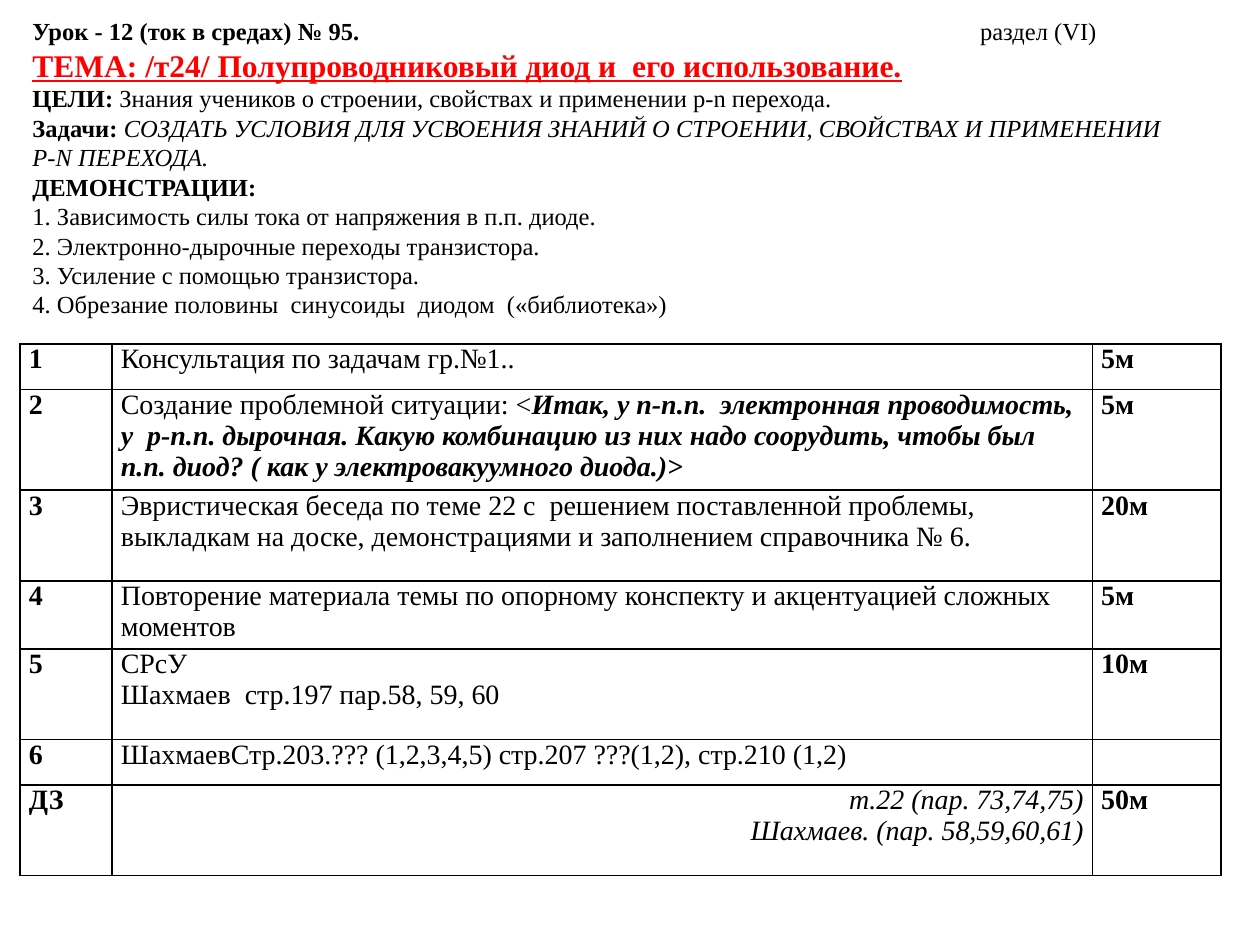
from lxml import etree
from pptx import Presentation
from pptx import util as u
from pptx.dml import color
from pptx.enum import text
from pptx.oxml import ns

Inches = u.Inches
BOLD = {"bold": True}
ITALIC = {"italic": True}
BOLD_ITALIC = {"bold": True, "italic": True}
TOPIC = {"bold": True, "underline": True, "size": u.Pt(18)}


def paint(target, value):
    target.rgb = color.RGBColor.from_string(value)


def write(frame, paragraphs, size, align=None):
    for number, runs in enumerate(paragraphs):
        line = frame.paragraphs[0] if number == 0 else frame.add_paragraph()
        line.alignment = align
        for words, formats in runs:
            run = line.add_run()
            run.text = words
            defaults = {"name": "Times New Roman", "size": u.Pt(size), "bold": False}
            for key, value in {**defaults, **formats}.items():
                setattr(run.font, key, value)
            paint(run.font.fill.fore_color if run.font.fill.solid() else run.font.color,
                  "FF0000" if formats is TOPIC else "000000")


deck = Presentation()
deck.slide_width, deck.slide_height = Inches(10), Inches(7.5)
slide = deck.slides.add_slide(deck.slide_layouts[6])

heading = [
    [("Урок - 12 (ток в средах) № 95.", BOLD), ("\tраздел (VI)", {})],
    [("ТЕМА: /т24/ Полупроводниковый диод и  его использование.", TOPIC)],
    [("ЦЕЛИ:", BOLD),
     (" Знания учеников о строении, свойствах и применении p-n перехода.", {})],
    [("Задачи: ", BOLD),
     ("СОЗДАТЬ УСЛОВИЯ ДЛЯ УСВОЕНИЯ ЗНАНИЙ О СТРОЕНИИ, СВОЙСТВАХ И ПРИМЕНЕНИИ P-N ПЕРЕХОДА.", ITALIC)],
    [("ДЕМОНСТРАЦИИ:", BOLD)],
    [("1. Зависимость силы тока от напряжения в п.п. диоде.", {})],
    [("2. Электронно-дырочные переходы транзистора.", {})],
    [("3. Усиление с помощью транзистора.", {})],
    [("4. Обрезание половины  синусоиды  диодом  («библиотека»)", {})],
]
intro = slide.shapes.add_textbox(Inches(0.16), Inches(0.08), Inches(9.3), Inches(2.76)).text_frame
intro.word_wrap = True
intro.auto_size = text.MSO_AUTO_SIZE.SHAPE_TO_FIT_TEXT
write(intro, heading, 14)
lesson_line = intro.paragraphs[0]
lesson_line.alignment = text.PP_ALIGN.LEFT
tabs = etree.SubElement(lesson_line._p.pPr, ns.qn("a:tabLst"))
etree.SubElement(tabs, ns.qn("a:tab"), pos=str(Inches(7.52)), algn="l")

stages = [
    ("1", [[("Консультация по задачам гр.№1..", {})]], "5м", 0.36),
    ("2", [[("Создание проблемной ситуации: <", {}),
            ("Итак, у n-п.п.  электронная проводимость, у  p-п.п. дырочная. "
             "Какую комбинацию из них надо соорудить, чтобы был п.п. диод? "
             "( как у электровакуумного диода.)>", BOLD_ITALIC)]], "5м", 0.8),
    ("3", [[("Эвристическая беседа по теме 22 с  решением поставленной проблемы, "
             "выкладкам на доске, демонстрациями и заполнением справочника № 6.", {})]], "20м", 0.72),
    ("4", [[("Повторение материала темы по опорному конспекту и акцентуацией "
             "сложных моментов", {})]], "5м", 0.54),
    ("5", [[("СРсУ", {})], [("Шахмаев  стр.197 пар.58, 59, 60", {})]], "10м", 0.72),
    ("6", [[("ШахмаевСтр.203.??? (1,2,3,4,5) стр.207 ???(1,2), стр.210 (1,2)", {})]], "", 0.36),
    ("ДЗ", [[("т.22 (пар. 73,74,75)", ITALIC)],
            [("Шахмаев. (пар. 58,59,60,61)", ITALIC)]], "50м", 0.72),
]
plan = slide.shapes.add_table(len(stages), 3, Inches(0.16), Inches(2.73),
                              Inches(9.53), Inches(4.22)).table
plan.first_row = plan.horz_banding = False
for column, width in zip(plan.columns, (0.73, 7.78, 1.02)):
    column.width = Inches(width)

margins = {"margin_left": Inches(0.07), "margin_right": Inches(0.07),
           "margin_top": 0, "margin_bottom": 0}
for row, (mark, activity, minutes, height) in zip(plan.rows, stages):
    row.height = Inches(height)
    contents = ([[(mark, BOLD)]], activity, [[(minutes, BOLD)]] if minutes else [])
    for place, (cell, content) in enumerate(zip(row.cells, contents)):
        for key, value in margins.items():
            setattr(cell, key, value)
        homework = mark == "ДЗ" and place == 1
        write(cell.text_frame, content, 16, text.PP_ALIGN.RIGHT if homework else None)
        properties = cell._tc.get_or_add_tcPr()
        for side in ("lnL", "lnR", "lnT", "lnB"):
            border = etree.SubElement(properties, ns.qn("a:" + side), w=str(u.Pt(1)))
            fill = etree.SubElement(border, ns.qn("a:solidFill"))
            etree.SubElement(fill, ns.qn("a:srgbClr"), val="000000")
        cell.fill.background()

deck.save("out.pptx")
